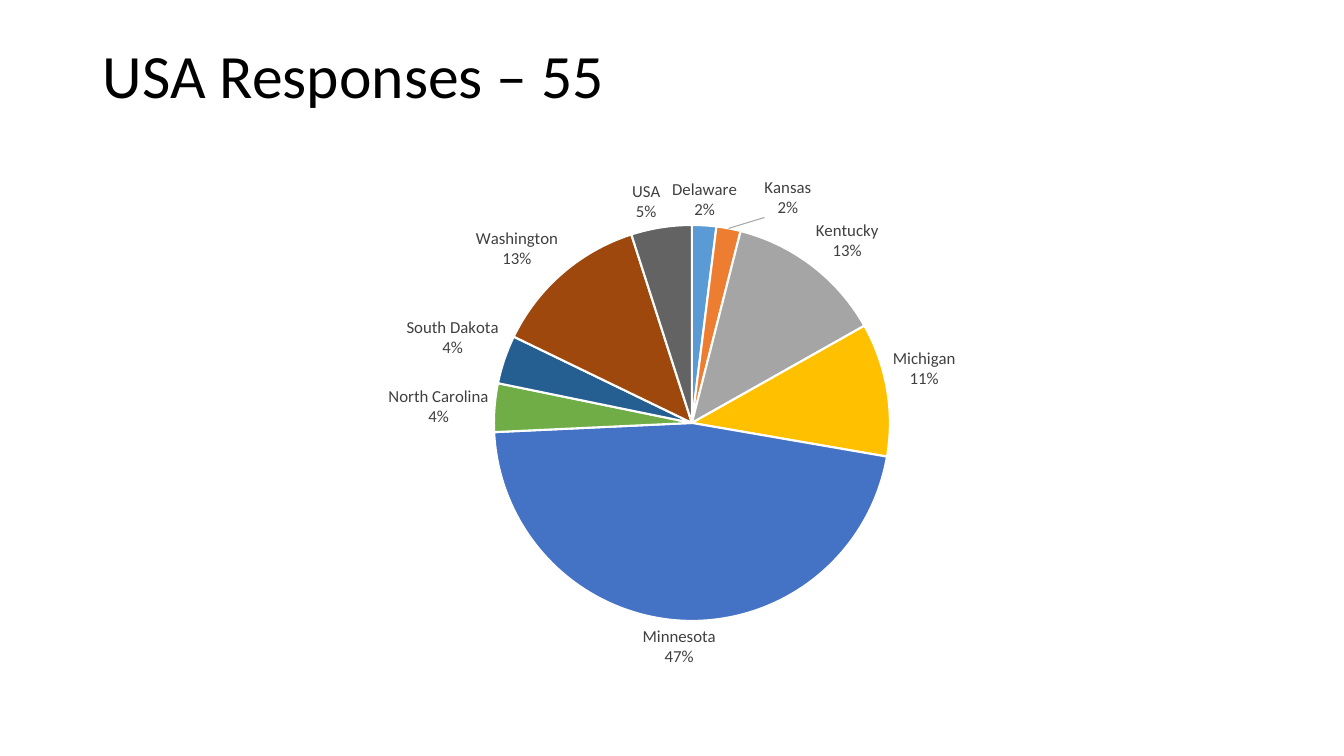
"""Build a slide with a pie chart of survey responses by US state."""
from lxml import etree
from pptx import Presentation
from pptx.chart.data import CategoryChartData
from pptx.dml.color import RGBColor
from pptx.enum.chart import XL_CHART_TYPE, XL_LABEL_POSITION
from pptx.enum.text import MSO_ANCHOR
from pptx.oxml import parse_xml
from pptx.util import Emu, Pt

TITLE = "USA Responses – 55"
RESPONSES = [
    ("Delaware", 2, RGBColor(0x5B, 0x9B, 0xD5)),
    ("Kansas", 2, RGBColor(0xED, 0x7D, 0x31)),
    ("Kentucky", 13, RGBColor(0xA5, 0xA5, 0xA5)),
    ("Michigan", 11, RGBColor(0xFF, 0xC0, 0x00)),
    ("Minnesota", 47, RGBColor(0x44, 0x72, 0xC4)),
    ("North Carolina", 4, RGBColor(0x70, 0xAD, 0x47)),
    ("South Dakota", 4, RGBColor(0x25, 0x5E, 0x91)),
    ("Washington", 13, RGBColor(0x9E, 0x48, 0x0E)),
    ("USA", 5, RGBColor(0x63, 0x63, 0x63)),
]
BLACK = RGBColor(0, 0, 0)
WHITE = RGBColor(0xFF, 0xFF, 0xFF)
LABEL_GRAY = RGBColor(0x40, 0x40, 0x40)
FONT = "Calibri"
PIE = XL_CHART_TYPE.PIE
OUTSIDE_END = XL_LABEL_POSITION.OUTSIDE_END
TOP = MSO_ANCHOR.TOP

PX = 914400 / 100.8
SLIDE_SIZE = (1344, 756)
TITLE_BOX = (93, 40, 1159, 146)
CHART_BOX = (93, 165, 1159, 515)
PIE_BOX = (494, 225, 396, 396)
KANSAS_SHIFT = (36, -5)

CHART_NS = "http://schemas.openxmlformats.org/drawingml/2006/chart"
DRAWING_NS = "http://schemas.openxmlformats.org/drawingml/2006/main"
LEADER_LINES = (
    f'<c:leaderLines xmlns:c="{CHART_NS}" xmlns:a="{DRAWING_NS}"><c:spPr><a:ln w="9525">'
    '<a:solidFill><a:srgbClr val="A6A6A6"/></a:solidFill></a:ln></c:spPr></c:leaderLines>'
)


def to_emu(lengths):
    return [Emu(round(length * PX)) for length in lengths]


def style_font(font, size, color):
    font.name = FONT
    font.size = Pt(size)
    font.color.rgb = color


def manual_layout(**settings):
    items = "".join(f'<c:{name} val="{value}"/>' for name, value in settings.items())
    return parse_xml(
        f'<c:layout xmlns:c="{CHART_NS}"><c:manualLayout>{items}</c:manualLayout></c:layout>'
    )


def show_name_and_percent(labels):
    for name, value in (("showVal", "0"), ("showCatName", "1"), ("showPercent", "1")):
        labels.find(f"{{{CHART_NS}}}{name}").set("val", value)
    separator = etree.Element(f"{{{CHART_NS}}}separator")
    separator.text = "\n"
    last_switch = labels.xpath("c:showBubbleSize | c:showPercent")[-1]
    last_switch.addnext(separator)


def add_title(slide):
    text_frame = slide.shapes.add_textbox(*to_emu(TITLE_BOX)).text_frame
    text_frame.word_wrap = True
    text_frame.vertical_anchor = TOP
    text_frame.text = TITLE
    paragraph = text_frame.paragraphs[0]
    paragraph.line_spacing = 0.9
    style_font(paragraph.runs[0].font, 44, BLACK)


def add_labels(series):
    labels = series.data_labels
    labels.position = OUTSIDE_END
    style_font(labels.font, 12, LABEL_GRAY)

    kansas = series.points[1].data_label
    style_font(kansas.font, 12, LABEL_GRAY)
    kansas.position = OUTSIDE_END
    kansas_element = series.points[1].data_label.font and labels._element.xpath("c:dLbl")[0]
    x, y = (round(shift / size, 2) for shift, size in zip(KANSAS_SHIFT, CHART_BOX[2:]))
    kansas_element.insert(1, manual_layout(x=x, y=y))

    show_name_and_percent(kansas_element)
    show_name_and_percent(labels._element)
    for leader in labels._element.xpath("c:showLeaderLines"):
        labels._element.remove(leader)
    leader = etree.SubElement(labels._element, f"{{{CHART_NS}}}showLeaderLines")
    leader.set("val", "1")
    leader.addnext(parse_xml(LEADER_LINES))


def add_pie(slide):
    data = CategoryChartData()
    data.categories = [state for state, _, _ in RESPONSES]
    data.add_series("Series 1", [percent for _, percent, _ in RESPONSES])
    chart = slide.shapes.add_chart(PIE, *to_emu(CHART_BOX), data).chart
    chart.has_title = False
    chart.has_legend = False
    style_font(chart.font, 10, BLACK)
    plot = chart.plots[0]
    plot.vary_by_categories = True

    series = plot.series[0]
    for index, (_, _, color) in enumerate(RESPONSES):
        slice_format = series.points[index].format
        slice_format.fill.solid()
        slice_format.fill.fore_color.rgb = color
        slice_format.line.color.rgb = WHITE
        slice_format.line.width = Pt(1.5)
    add_labels(series)

    plot_area = chart._chartSpace.xpath("c:chart/c:plotArea")[0]
    for layout in plot_area.xpath("c:layout"):
        plot_area.remove(layout)
    left, top, width, height = CHART_BOX
    pie_left, pie_top, pie_width, pie_height = PIE_BOX
    plot_area.insert(0, manual_layout(
        layoutTarget="inner", xMode="edge", yMode="edge",
        x=(pie_left - left) / width, y=(pie_top - top) / height,
        w=pie_width / width, h=pie_height / height,
    ))


def main():
    presentation = Presentation()
    presentation.slide_width, presentation.slide_height = to_emu(SLIDE_SIZE)
    slide = presentation.slides.add_slide(presentation.slide_layouts[6])
    add_title(slide)
    add_pie(slide)
    presentation.save("out.pptx")


if __name__ == "__main__":
    main()
